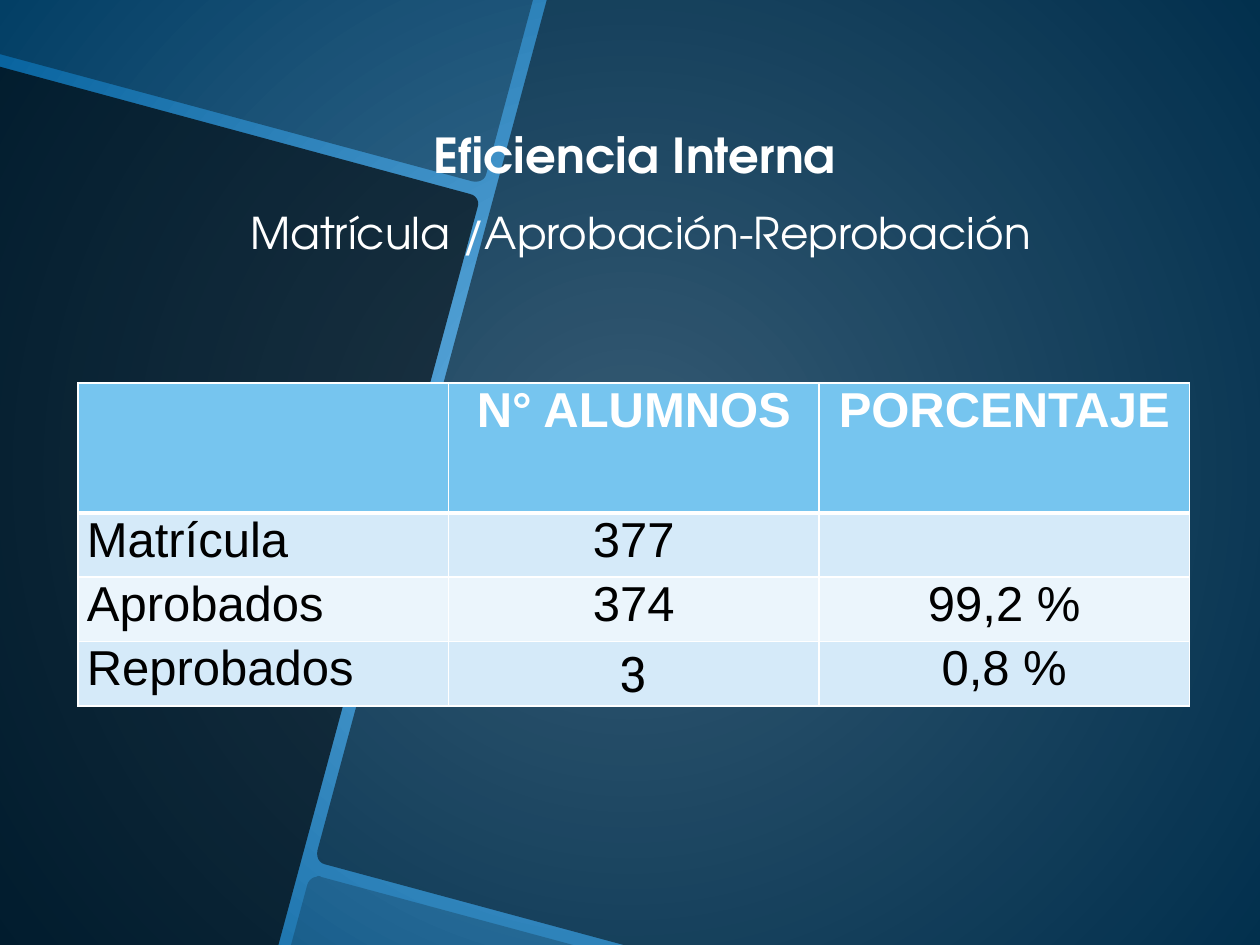
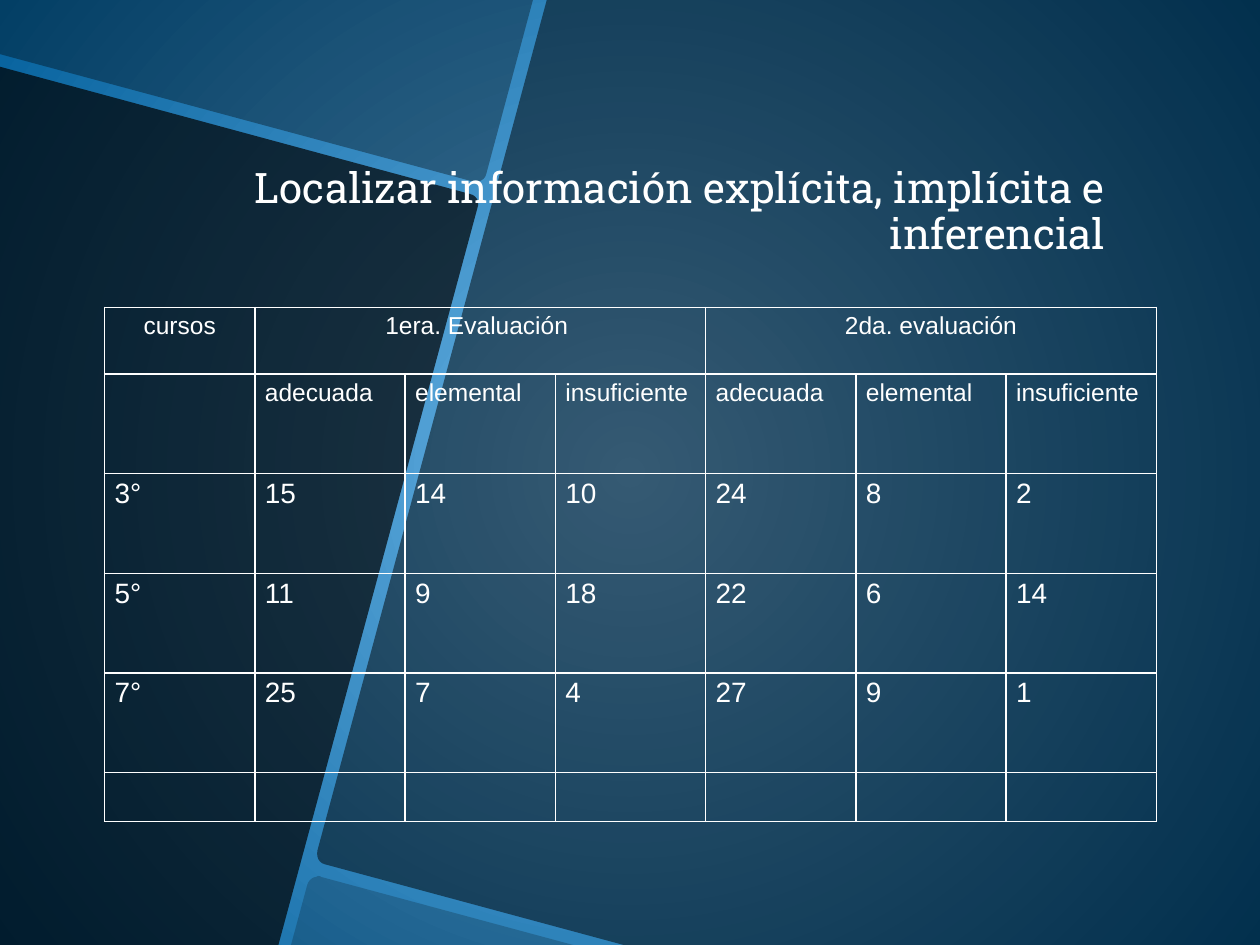
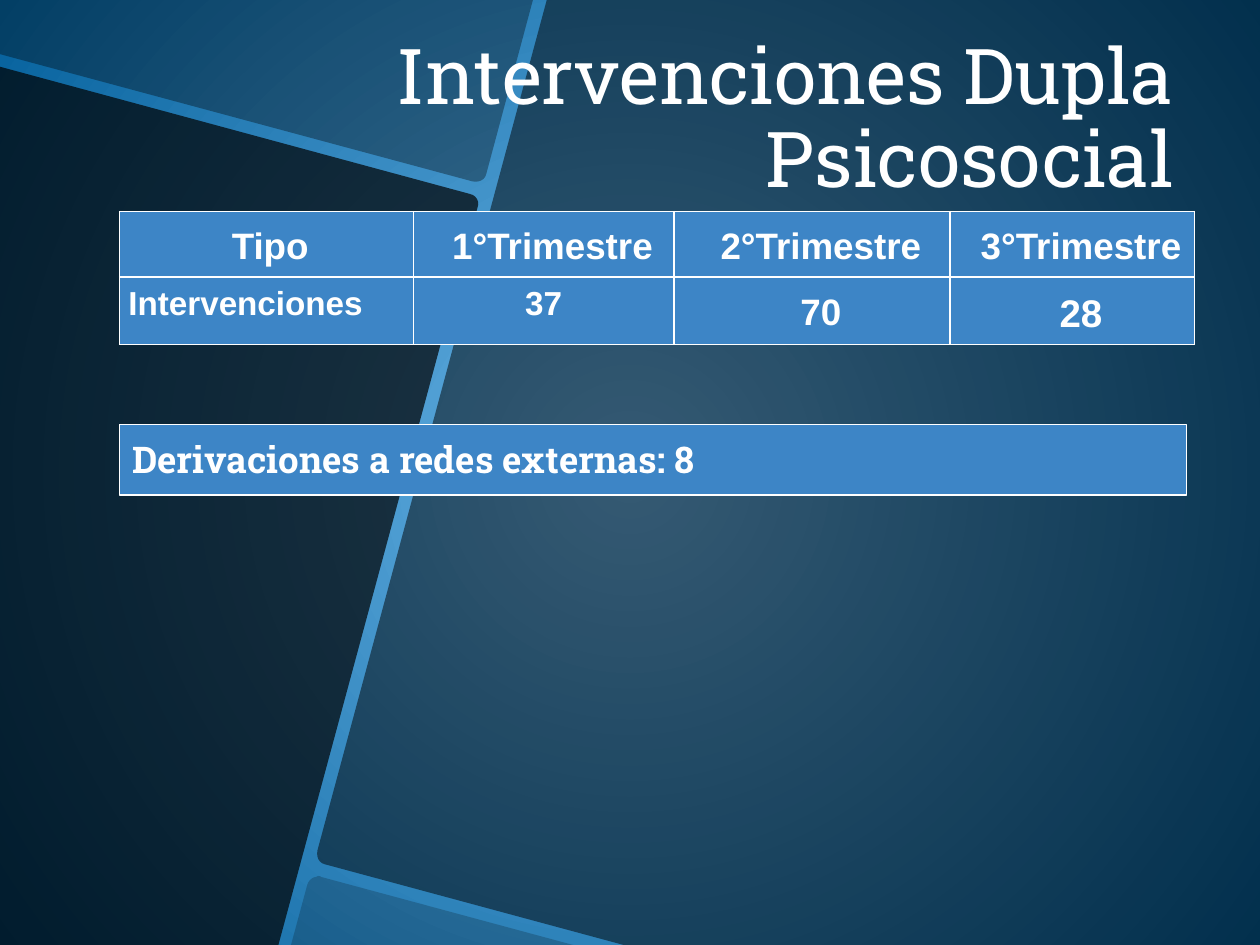
from lxml.etree import SubElement
from pptx import Presentation
from pptx.dml.color import RGBColor
from pptx.enum.shapes import MSO_SHAPE
from pptx.enum.text import MSO_ANCHOR, MSO_AUTO_SIZE, PP_ALIGN
from pptx.oxml.ns import qn
from pptx.util import Inches, Pt

# The slide is a grid of 10 columns by 7.5 rows, one inch each.
COLUMNS, ROWS = 10, 7.5
TITLE_ONLY, BLANK = 5, 6

WHITE, BLACK = "FFFFFF", "000000"
GLOW, DEEP = "6BB5E7", "05619C"
HEADER_BLUE, BAND, LIGHT_BAND = "76C5EF", "D5EAF9", "EBF5FC"
BOX_BLUE = "3D85C6"
SERIF, SANS, ROUND_SANS = "Roboto Slab", "Arial", "TeX Gyre Adventor"
LEFT, CENTER, RIGHT = PP_ALIGN.LEFT, PP_ALIGN.CENTER, PP_ALIGN.RIGHT

# Each panel is an opacity and an outline; a step of three points is a curve.
PANELS = [
    (70, [(0, 0.53), (3.73, 1.54), ((3.78, 1.55), (3.81, 1.6), (3.79, 1.65)),
          (2.21, ROWS), (0, ROWS)]),
    (35, [(0, 0), (4.23, 0), (3.86, 1.38),
          ((3.85, 1.43), (3.8, 1.45), (3.75, 1.44)), (0, 0.43)]),
    (20, [(2.51, 6.96), ((2.52, 6.95), (2.54, 6.95), (2.55, 6.96)),
          (4.55, ROWS), (2.31, ROWS), (2.44, 7.02),
          ((2.45, 6.99), (2.48, 6.96), (2.51, 6.96))]),
    (50, [(4.34, 0), (COLUMNS, 0), (COLUMNS, ROWS), (4.95, ROWS), (2.58, 6.86),
          ((2.53, 6.85), (2.51, 6.8), (2.52, 6.75))]),
]


def color(hex_code):
    return RGBColor.from_string(hex_code)


def grid(*lengths):
    return [Inches(length) for length in lengths]


def curve_points(points, steps=6):
    """Points along a cubic curve, without its start."""
    for step in range(1, steps + 1):
        t = step / steps
        weights = ((1 - t) ** 3, 3 * t * (1 - t) ** 2, 3 * t * t * (1 - t), t ** 3)
        yield tuple(sum(w * p[axis] for w, p in zip(weights, points))
                    for axis in (0, 1))


def flatten(outline):
    points = []
    for step in outline:
        if len(step) == 3:
            points += curve_points((points[-1], *step))
        else:
            points.append(step)
    return [tuple(grid(*point)) for point in points]


def paint_background(master):
    fill = master.background.fill
    fill.gradient()
    for stop, hex_code in zip(fill.gradient_stops, (GLOW, DEEP)):
        stop.color.rgb = color(hex_code)
    gradient = master.element.find(".//" + qn("a:gradFill"))
    gradient.remove(gradient.find(qn("a:lin")))
    circle = SubElement(gradient, qn("a:path"), path="circle")
    SubElement(circle, qn("a:fillToRect"),
               {side: "50000" for side in ("l", "t", "r", "b")})


def add_panels(master, slide):
    """Draw the dark panels on a slide and move them to the master."""
    for index, (opacity, outline) in enumerate(PANELS):
        start, *rest = flatten(outline)
        builder = slide.shapes.build_freeform(*start, scale=1.0)
        builder.add_line_segments(rest, close=True)
        panel = builder.convert_to_shape()
        panel.shadow.inherit = False
        panel.line.fill.background()
        panel.fill.solid()
        panel.fill.fore_color.rgb = color(BLACK)
        tint = panel.element.spPr.find(".//" + qn("a:srgbClr"))
        SubElement(tint, qn("a:alpha"), val=str(opacity * 1000))
        panel.element.nvSpPr.cNvPr.set("id", str(100 + index))
        master.element.cSld.spTree.insert(2 + index, panel.element)


def format_paragraph(paragraph, size, font=SANS, hex_code=WHITE, bold=False,
                     align=LEFT, spacing=None, indent=0):
    if indent:
        paragraph._p.get_or_add_pPr().set("marL", str(Inches(indent)))
    paragraph.alignment = align
    paragraph.line_spacing = spacing
    paragraph.font.size = Pt(size)
    paragraph.font.name = font
    paragraph.font.bold = bold
    paragraph.font.color.rgb = color(hex_code)


def set_margins(target, side, end):
    target.margin_left = target.margin_right = Inches(side)
    target.margin_top = target.margin_bottom = Inches(end)


def set_title(slide, place, text, size, margins):
    title = slide.shapes.title
    title.left, title.top, title.width, title.height = grid(*place)
    frame = title.text_frame
    frame.text = text
    frame.word_wrap = True
    frame.auto_size = MSO_AUTO_SIZE.NONE
    frame.vertical_anchor = MSO_ANCHOR.BOTTOM
    set_margins(frame, *margins)
    format_paragraph(frame.paragraphs[0], size, SERIF, align=RIGHT, spacing=0.9)


def set_borders(cell, bottom=1):
    properties = cell._tc.get_or_add_tcPr()
    for index, side in enumerate(("lnL", "lnR", "lnT", "lnB")):
        width = bottom if side == "lnB" else 1
        line = properties.makeelement(qn("a:" + side), {"w": str(Pt(width))})
        fill = SubElement(line, qn("a:solidFill"))
        SubElement(fill, qn("a:srgbClr"), val=WHITE)
        properties.insert(index, line)


def add_grid_table(slide, left, top, widths, heights, texts, margins):
    """Add a white-ruled table without fills and return it."""
    place = grid(left, top, sum(widths), sum(heights))
    table = slide.shapes.add_table(len(heights), len(widths), *place).table
    table.first_row = table.horz_banding = False
    for column, width in zip(table.columns, widths):
        column.width = Inches(width)
    for row, height, row_texts in zip(table.rows, heights, texts):
        row.height = Inches(height)
        for cell, text in zip(row.cells, row_texts):
            cell.text = text
            cell.fill.background()
            set_margins(cell, *margins)
            set_borders(cell)
    return table


def format_row(table, row, size, aligns, fill=None, **style):
    for cell, align in zip(table.rows[row].cells, aligns):
        if fill:
            cell.fill.solid()
            cell.fill.fore_color.rgb = color(fill)
        if cell.text:
            format_paragraph(cell.text_frame.paragraphs[0], size, align=align,
                             **style)


def build_enrolment(slide):
    texts = [("", "N° ALUMNOS", "PORCENTAJE"), ("Matrícula", "377", ""),
             ("Aprobados", "374", "99,2 %"), ("Reprobados", "3", "0,8 %")]
    table = add_grid_table(slide, 0.62, 3.04, [2.94] * 3, [1.03] + [0.51] * 3,
                           texts, (0.07, 0))
    format_row(table, 0, 28, [CENTER] * 3, HEADER_BLUE, bold=True)
    for cell in table.rows[0].cells:
        cell._tc.tcPr.find(qn("a:lnB")).set("w", str(Pt(3)))
    for row, fill in enumerate((BAND, LIGHT_BAND, BAND), start=1):
        format_row(table, row, 28, (LEFT, CENTER, CENTER), fill, hex_code=BLACK)
    table.cell(3, 1).text_frame.paragraphs[0].font.name = SERIF

    frame = slide.shapes.add_textbox(*grid(0.83, 1.07, 8.41, 1.02)).text_frame
    frame.word_wrap = True
    frame.vertical_anchor = MSO_ANCHOR.MIDDLE
    frame.text = "Eficiencia Interna\n Matrícula /Aprobación-Reprobación"
    heading, subject = frame.paragraphs
    format_paragraph(heading, 27.5, ROUND_SANS, bold=True, align=CENTER, spacing=0.7)
    format_paragraph(subject, 25, ROUND_SANS, align=CENTER, spacing=0.7)
    subject.space_before = Pt(22)


def build_reading_results(slide):
    set_title(slide, (1.16, 1.15, 7.68, 0.94),
              "Localizar información explícita, implícita e inferencial",
              24, (0.07, 0.04))
    levels = ("adecuada", "elemental", "insuficiente")
    texts = [("cursos", "1era. Evaluación ", "", "", "2da. evaluación", "", ""),
             ("", *levels, *levels),
             ("3°", "15", "14", "10", "24", "8", "2"),
             ("5°", "11", "9", "18", "22", "6", "14"),
             ("7°", "25", "7", "4", "27", "9", "1"),
             ("",) * 7]
    table = add_grid_table(slide, 0.83, 2.44, [8.35 / 7] * 7,
                           [0.53] + [0.79] * 4 + [0.39], texts, (0.08, 0.04))
    for first in (1, 4):
        table.cell(0, first).merge(table.cell(0, first + 2))
    format_row(table, 0, 14, [CENTER] * 7)
    format_row(table, 1, 14, [LEFT] * 7)
    for row in (2, 3, 4):
        format_row(table, row, 16, [LEFT] * 7)


def build_interventions(slide):
    texts = [("Tipo ", "1°Trimestre", "2°Trimestre", "3°Trimestre"),
             ("Intervenciones", "37", "70", "28")]
    table = add_grid_table(slide, 0.95, 1.68, (2.33, 2.07, 2.19, 1.94),
                           (0.52, 0.53), texts, (0.07, 0.07))
    spaced = {"bold": True, "spacing": 1.15, "indent": 0.14}
    format_row(table, 0, 21, [CENTER] * 4, BOX_BLUE, **spaced)
    format_row(table, 1, 19, (LEFT, CENTER, CENTER, CENTER), BOX_BLUE, bold=True)
    for column, size in ((2, 21), (3, 22)):
        format_paragraph(table.cell(1, column).text_frame.paragraphs[0], size,
                         align=CENTER, **spaced)

    box = slide.shapes.add_shape(MSO_SHAPE.RECTANGLE, *grid(0.95, 3.37, 8.47, 0.56))
    box.shadow.inherit = False
    box.fill.solid()
    box.fill.fore_color.rgb = color(BOX_BLUE)
    box.line.color.rgb = color(WHITE)
    box.line.width = Pt(0.75)
    frame = box.text_frame
    frame.text = "Derivaciones a redes externas: 8"
    frame.vertical_anchor = MSO_ANCHOR.TOP
    set_margins(frame, 0.1, 0.1)
    format_paragraph(frame.paragraphs[0], 21, SERIF, bold=True)

    set_title(slide, (0.95, -0.18, 8.47, 1.85), "Intervenciones Dupla Psicosocial",
              44, (0.1, 0.05))


def main():
    deck = Presentation()
    deck.slide_width, deck.slide_height = grid(COLUMNS, ROWS)
    pages = [(BLANK, build_enrolment), (TITLE_ONLY, build_reading_results),
             (TITLE_ONLY, build_interventions)]
    slides = [deck.slides.add_slide(deck.slide_layouts[layout])
              for layout, _ in pages]
    paint_background(deck.slide_master)
    add_panels(deck.slide_master, slides[0])
    for slide, (_, build) in zip(slides, pages):
        build(slide)
    deck.save("out.pptx")


if __name__ == "__main__":
    main()
